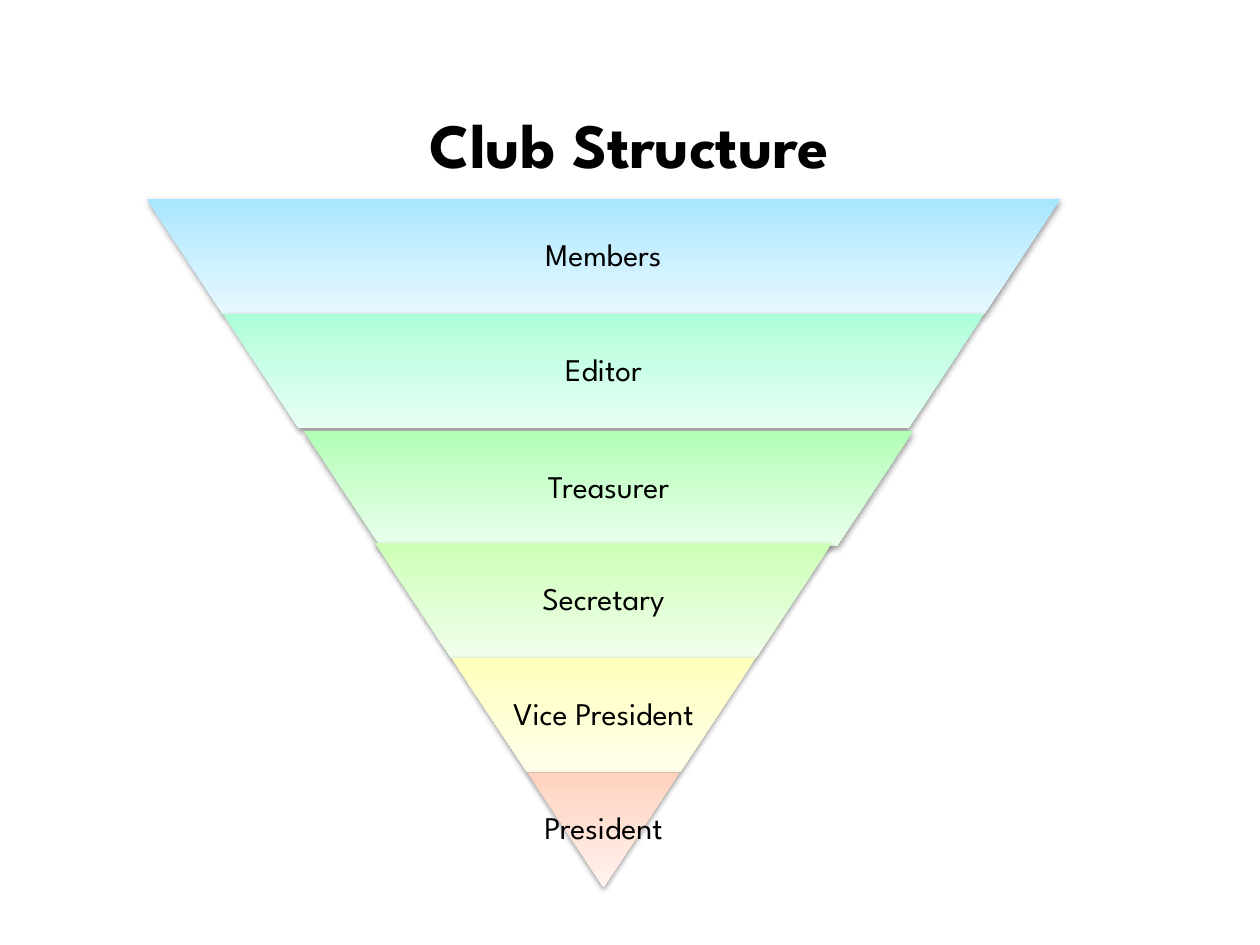
from pptx import Presentation
from pptx.dml.color import RGBColor
from pptx.enum import shapes, text
from pptx.oxml import parse_xml
from pptx.oxml.ns import nsdecls
from pptx.util import Inches, Pt

TITLE = "Club Structure"
FONT = "League Spartan"
COLOURS = {
    "text": "000000",
    "Members": ("A7E6FF", "C1EDFF", "E7F8FF"),
    "Editor": ("ACFFD9", "C4FFE4", "E8FFF4"),
    "Treasurer": ("B0FFB4", "C7FFCA", "EAFFEB"),
    "Secretary": ("CCFFB4", "DAFFCA", "F1FFEB"),
    "Vice President": ("FFFFB9", "FFFFCD", "FFFFEC"),
    "President": ("FFD2BD", "FFDED0", "FFF2ED"),
}
ROLES = ["Members", "Editor", "Treasurer", "Secretary", "Vice President", "President"]
NUDGES = {"Treasurer": (0.04, 0.02)}
STOPS = (0, 35, 100)
CENTRE, TOP, FULL_WIDTH, TIER_HEIGHT = 4.79, 1.58, 7.25, 0.91
LABEL_SHARE = 0.65
INSET = 0.03


def style(paragraph, size, bold=False):
    paragraph.alignment = text.PP_ALIGN.CENTER
    paragraph.font.name = FONT
    paragraph.font.size = Pt(size)
    paragraph.font.bold = bold
    paragraph.font.color.rgb = RGBColor.from_string(COLOURS["text"])


def place(centre, top, width):
    return [Inches(v) for v in (centre - width / 2, top, width, TIER_HEIGHT)]


def add_tier(group, role, centre, top, width):
    tier = group.shapes.add_shape(shapes.MSO_SHAPE.TRAPEZOID, *place(centre, top, width))
    tier.rotation = 180
    tier.adjustments[0] = 0.663
    stops = "".join(
        f'<a:gs pos="{stop * 1000}"><a:srgbClr val="{colour}"/></a:gs>'
        for stop, colour in zip(STOPS, COLOURS[role])
    )
    properties = tier._element.spPr
    properties.append(parse_xml(
        f'<a:gradFill {nsdecls("a")} rotWithShape="1"><a:gsLst>{stops}</a:gsLst>'
        '<a:lin ang="16200000" scaled="0"/></a:gradFill>'
    ))
    tier.line.fill.background()
    properties.append(parse_xml(
        f'<a:effectLst {nsdecls("a")}><a:outerShdw blurRad="40000" dist="20000" '
        f'dir="5400000" rotWithShape="0"><a:srgbClr val="{COLOURS["text"]}">'
        '<a:alpha val="38000"/></a:srgbClr></a:outerShdw></a:effectLst>'
    ))


def add_label(group, role, centre, top, width):
    label = group.shapes.add_textbox(*place(centre, top, width))
    frame = label.text_frame
    frame.word_wrap = True
    frame.vertical_anchor = text.MSO_ANCHOR.MIDDLE
    frame.margin_left = frame.margin_right = Inches(INSET)
    frame.margin_top = frame.margin_bottom = Inches(INSET)
    frame.text = role
    frame.paragraphs[0].line_spacing = 0.9
    style(frame.paragraphs[0], 18)


def main():
    deck = Presentation()
    deck.slide_width, deck.slide_height = Inches(10), Inches(7.5)
    slide = deck.slides.add_slide(deck.slide_layouts[5])

    title = slide.shapes.title
    title.left, title.top = Inches(1.58), Inches(0.67)
    title.width, title.height = Inches(6.83), Inches(0.93)
    title.text_frame.text = TITLE
    title.text_frame.vertical_anchor = text.MSO_ANCHOR.MIDDLE
    style(title.text_frame.paragraphs[0], 36, bold=True)

    pyramid = slide.shapes.add_group_shape()
    for index, role in enumerate(ROLES):
        shift, drop = NUDGES.get(role, (0, 0))
        centre = CENTRE + shift
        top = TOP + index * TIER_HEIGHT + drop
        width = FULL_WIDTH * (len(ROLES) - index) / len(ROLES)
        add_tier(pyramid, role, centre, top, width)
        is_tip = role == ROLES[-1]
        add_label(pyramid, role, centre, top, width if is_tip else width * LABEL_SHARE)

    deck.save("out.pptx")


if __name__ == "__main__":
    main()
